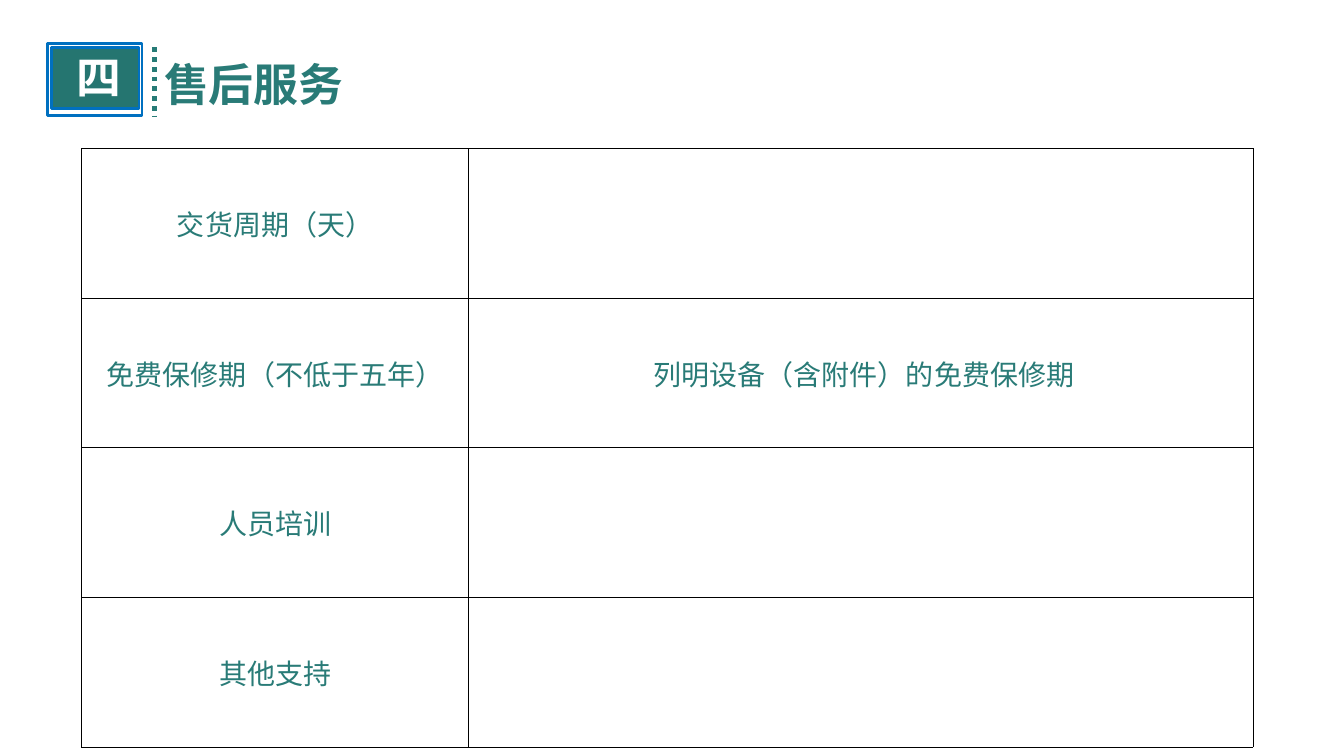
from lxml.etree import SubElement
from pptx import Presentation
from pptx.dml.color import RGBColor
from pptx.enum.dml import MSO_LINE
from pptx.enum.shapes import MSO_CONNECTOR, MSO_SHAPE
from pptx.enum.text import MSO_ANCHOR, MSO_AUTO_SIZE, PP_ALIGN
from pptx.oxml.ns import qn
from pptx.util import Pt

FONT = "Noto Sans CJK SC"
TEAL = RGBColor(0x29, 0x7B, 0x77)
BADGE_TEAL = RGBColor(0x25, 0x75, 0x70)
DIVIDER_TEAL = RGBColor(0x26, 0x7B, 0x76)
BLUE = RGBColor(0x00, 0x70, 0xC0)
WHITE = RGBColor(0xFF, 0xFF, 0xFF)
BLACK = RGBColor(0x00, 0x00, 0x00)


def add_text(paragraph, text, size, color, bold, align):
    paragraph.alignment = align
    run = paragraph.add_run()
    run.text = text
    run.font.size = Pt(size)
    run.font.bold = bold
    run.font.name = FONT
    run.font.color.rgb = color
    SubElement(run.font._element, qn("a:ea"), typeface=FONT)


def add_heading(frame, text, color):
    frame.word_wrap = True
    frame.auto_size = MSO_AUTO_SIZE.NONE
    frame.vertical_anchor = MSO_ANCHOR.MIDDLE
    frame.margin_top = frame.margin_bottom = 0
    add_text(frame.paragraphs[0], text, 32, color, True, PP_ALIGN.LEFT)


prs = Presentation()
prs.slide_width = Pt(960)
prs.slide_height = Pt(540)
slide = prs.slides.add_slide(prs.slide_layouts[5])
shapes = slide.shapes

title = shapes.title
title.left, title.top, title.width, title.height = Pt(110), Pt(36.5), Pt(312), Pt(46)
add_heading(title.text_frame, "售后服务", TEAL)

for left, top, width, height, color in [
    (33.8, 31, 67.7, 51.8, WHITE),
    (36.7, 33.8, 62.6, 43.9, BADGE_TEAL),
]:
    badge = shapes.add_shape(MSO_SHAPE.RECTANGLE, Pt(left), Pt(top), Pt(width), Pt(height))
    badge.shadow.inherit = False
    badge.fill.solid()
    badge.fill.fore_color.rgb = color
    badge.line.color.rgb = BLUE
    badge.line.width = Pt(2)

section_number = shapes.add_textbox(Pt(47.5), Pt(32), Pt(50), Pt(46))
add_heading(section_number.text_frame, "四", WHITE)

divider = shapes.add_connector(MSO_CONNECTOR.STRAIGHT, Pt(110.2), Pt(33.8), Pt(110.2), Pt(82.8))
divider.line.color.rgb = DIVIDER_TEAL
divider.line.width = Pt(3.5)
divider.line.dash_style = MSO_LINE.ROUND_DOT
SubElement(divider._element.spPr, qn("a:effectLst"))

services = [
    ("交货周期（天）", ""),
    ("免费保修期（不低于五年）", " 列明设备（含附件）的免费保修期"),
    ("人员培训", ""),
    ("其他支持", ""),
]
column_widths = [276.5, 560.2]
row_height = 106.92
service_table = shapes.add_table(
    len(services), len(column_widths), Pt(58.3), Pt(106),
    Pt(sum(column_widths)), Pt(row_height * len(services)),
).table
service_table.first_row = False
service_table.horz_banding = False
for column, width in zip(service_table.columns, column_widths):
    column.width = Pt(width)

for row_index, service in enumerate(services):
    service_table.rows[row_index].height = Pt(row_height)
    for column_index, text in enumerate(service):
        cell = service_table.cell(row_index, column_index)
        cell.vertical_anchor = MSO_ANCHOR.MIDDLE
        cell.margin_left = cell.margin_right = cell.margin_top = cell.margin_bottom = 0
        if text:
            add_text(cell.text_frame.paragraphs[0], text, 20, TEAL, False, PP_ALIGN.CENTER)
        cell_properties = cell._tc.get_or_add_tcPr()
        for side in ("a:lnL", "a:lnR", "a:lnT", "a:lnB"):
            border = SubElement(cell_properties, qn(side), w=str(Pt(0.5)))
            border_fill = SubElement(border, qn("a:solidFill"))
            SubElement(border_fill, qn("a:srgbClr"), val=str(BLACK))
        cell.fill.background()

prs.save("out.pptx")
